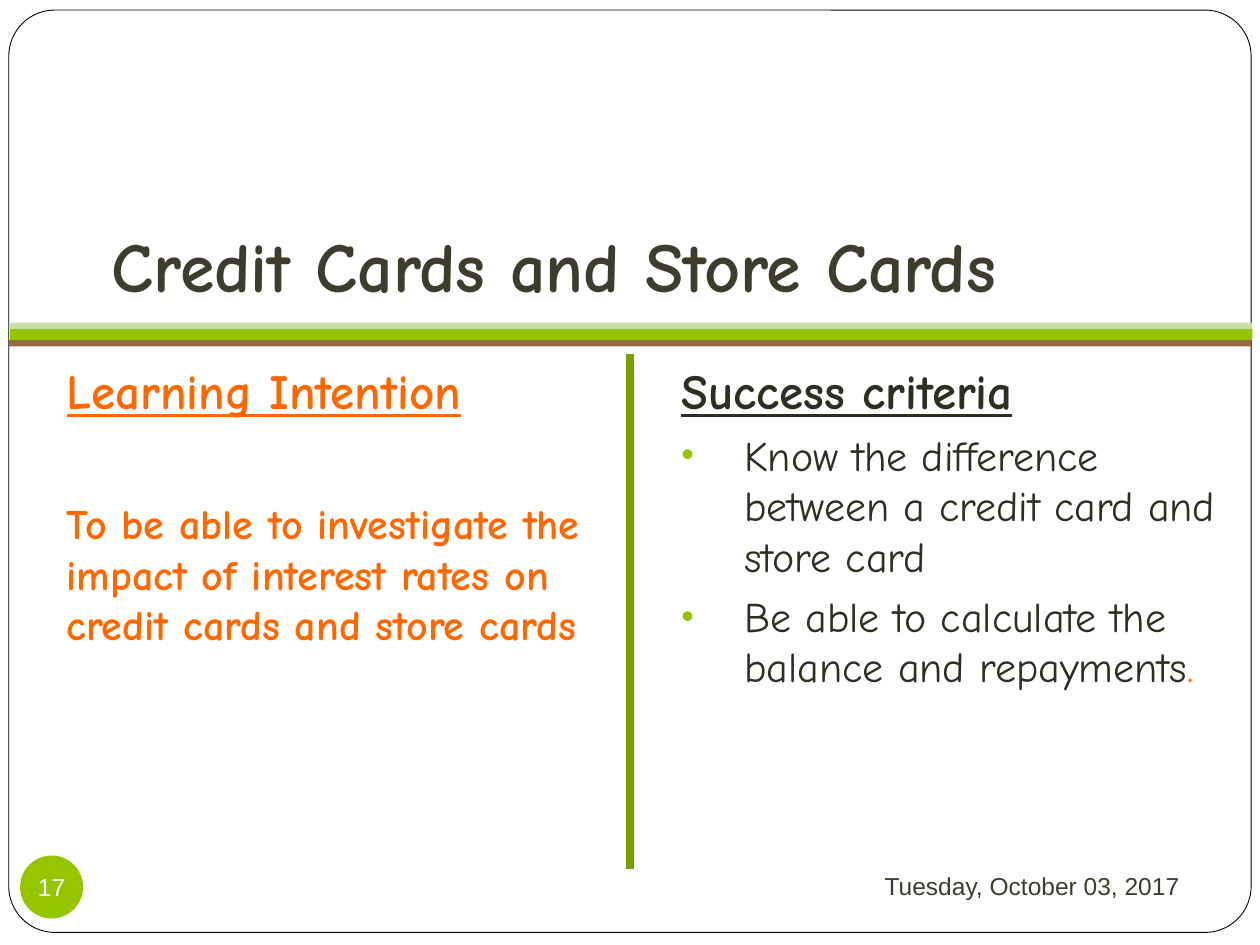
from lxml.etree import SubElement
from pptx import Presentation
from pptx.dml.color import RGBColor
from pptx.enum.shapes import MSO_CONNECTOR as CONN, MSO_SHAPE as SHAPE
from pptx.enum.text import MSO_ANCHOR as ANCHOR, PP_ALIGN as ALIGN
from pptx.oxml.ns import qn
from pptx.util import Inches, Pt

HAND, SANS = "Comic Neue", "Arial"
GREEN, ORANGE, OLIVE, DARK, WHITE = "94C600", "FF6700", "3E3D2D", "2E2E22", "FFFFFF"

BANDS = [  # left, top, height, colour
    (0.08, 2.6, 0.1, GREEN),
    (0.08, 2.56, 0.05, "C8DFAB"),
    (0.07, 2.7, 0.05, "956B43"),
]
TITLE = "Credit Cards and Store Cards"
INTENTION = ("Learning Intention",
             "To be able to investigate the impact of interest rates on "
             "credit cards and store cards")
CRITERIA_HEADING = "Success criteria"
CRITERIA = [  # each criterion is a list of (text, colour) runs
    [("Know the difference between a credit card and store card", DARK)],
    [("Be able to calculate the balance and repayments", DARK), (".", ORANGE)],
]
DATE, PAGE = "Tuesday, October 03, 2017", "17"
GAP = 5.8            # space before each paragraph, points
INTENTION_GAP = 45   # one heading line lower


def rgb(value):
    return RGBColor.from_string(value)


def add_box(s, kind, at, fill, line=None):
    sp = s.shapes.add_shape(kind, *map(Inches, at))
    sp.shadow.inherit = False
    sp.fill.solid()
    sp.fill.fore_color.rgb = rgb(fill)
    if line:
        sp.line.color.rgb = rgb(line)
        sp.line.width = Pt(0.5)
    else:
        sp.line.fill.background()
    return sp


def add_text(s, at, anchor=ANCHOR.TOP):
    tf = s.shapes.add_textbox(*map(Inches, at)).text_frame
    tf.word_wrap = True
    tf.vertical_anchor = anchor
    return tf


def add_run(p, text, size, color, font=HAND, bold=False, underline=False):
    r = p.add_run()
    r.text = text
    r.font.name, r.font.size = font, Pt(size)
    r.font.bold, r.font.underline = bold, underline
    r.font.color.rgb = rgb(color)


def add_heading(tf, text, color):
    p = tf.paragraphs[0]
    p.space_before = Pt(GAP)
    add_run(p, text, 28, color, bold=True, underline=True)


def add_bullet(p):
    pPr = p._p.get_or_add_pPr()
    pPr.set("marL", str(Inches(0.5)))
    pPr.set("indent", str(-Inches(0.5)))
    SubElement(SubElement(pPr, qn("a:buClr")), qn("a:srgbClr"), val=GREEN)
    SubElement(pPr, qn("a:buSzPct"), val="85000")
    SubElement(pPr, qn("a:buFont"), typeface=SANS)
    SubElement(pPr, qn("a:buChar"), char="•")


prs = Presentation()
prs.slide_width, prs.slide_height = Inches(10), Inches(7.5)
s = prs.slides.add_slide(prs.slide_layouts[6])

frame = add_box(s, SHAPE.ROUNDED_RECTANGLE, (0.07, 0.08, 9.86, 7.32), WHITE, "000000")
frame.adjustments[0] = 0.05
for left, top, height, color in BANDS:
    add_box(s, SHAPE.RECTANGLE, (left, top, 9.86, height), color)

tf = add_text(s, (0.79, 1.04, 8.5, 1.49), ANCHOR.BOTTOM)
tf.margin_bottom = Inches(0.1)
add_run(tf.paragraphs[0], TITLE, 40, OLIVE, bold=True)

tf = add_text(s, (0.43, 2.81, 4.45, 0.73))
add_heading(tf, INTENTION[0], ORANGE)
p = tf.add_paragraph()
p.space_before = Pt(INTENTION_GAP)
add_run(p, INTENTION[1], 24, ORANGE, bold=True)

tf = add_text(s, (6.75, 6.77, 2.71, 0.52), ANCHOR.MIDDLE)
tf.paragraphs[0].alignment = ALIGN.RIGHT
add_run(tf.paragraphs[0], DATE, 14, OLIVE, SANS)

badge = add_box(s, SHAPE.OVAL, (0.16, 6.79, 0.5, 0.5), GREEN)
tf = badge.text_frame
tf.margin_left = tf.margin_right = tf.margin_top = tf.margin_bottom = 0
tf.word_wrap = False
tf.vertical_anchor = ANCHOR.MIDDLE
tf.paragraphs[0].alignment = ALIGN.CENTER
add_run(tf.paragraphs[0], PAGE, 14, WHITE, SANS)

divider = s.shapes.add_connector(CONN.STRAIGHT, *map(Inches, (5, 2.81, 5, 6.9)))
divider.line.color.rgb = rgb("779F00")
divider.line.width = Pt(4.5)
SubElement(divider._element.spPr, qn("a:effectLst"))

tf = add_text(s, (5.31, 2.81, 4.45, 0.73))
add_heading(tf, CRITERIA_HEADING, DARK)
for runs in CRITERIA:
    p = tf.add_paragraph()
    p.space_before = Pt(GAP)
    add_bullet(p)
    for text, color in runs:
        add_run(p, text, 24, color)

prs.save("out.pptx")
